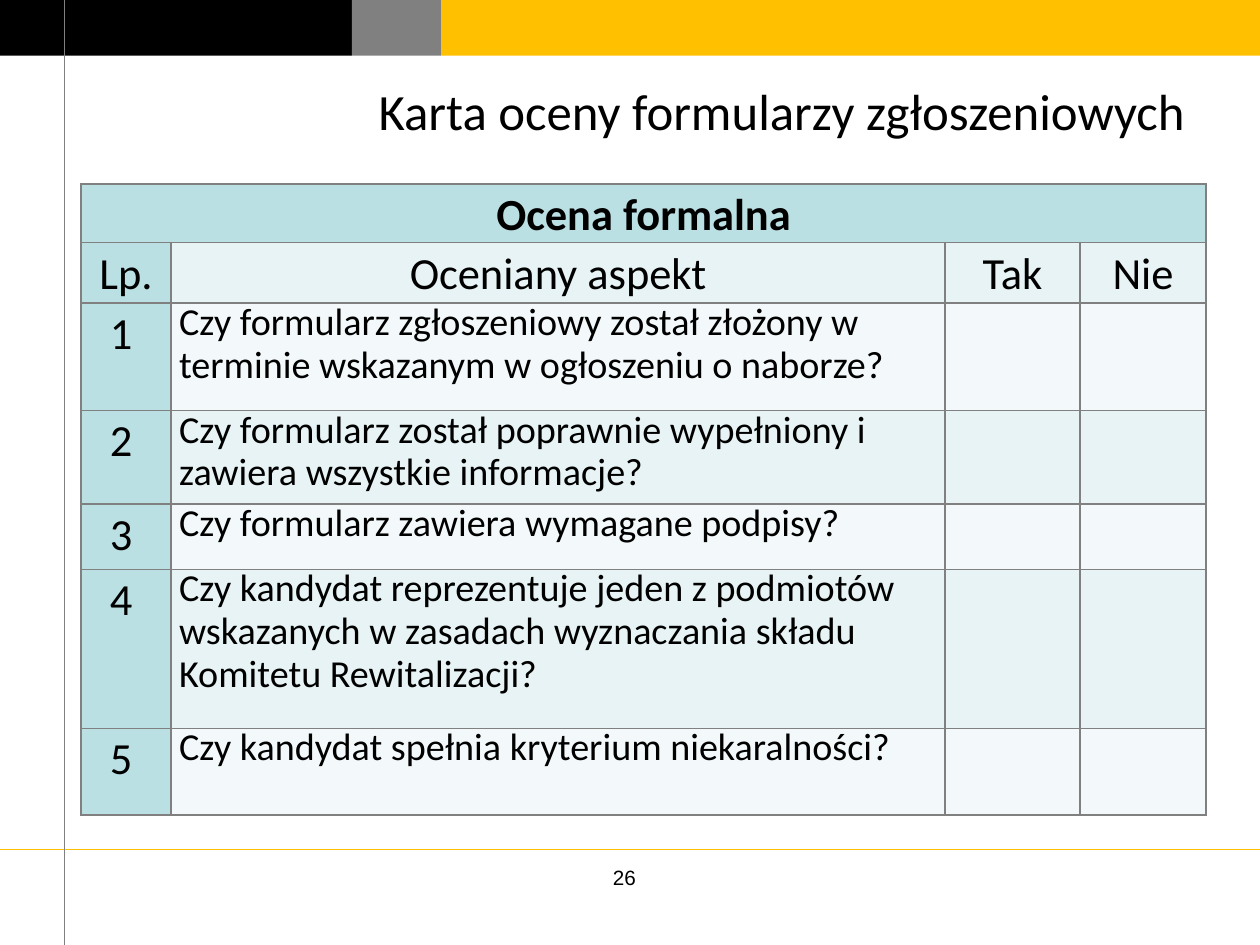
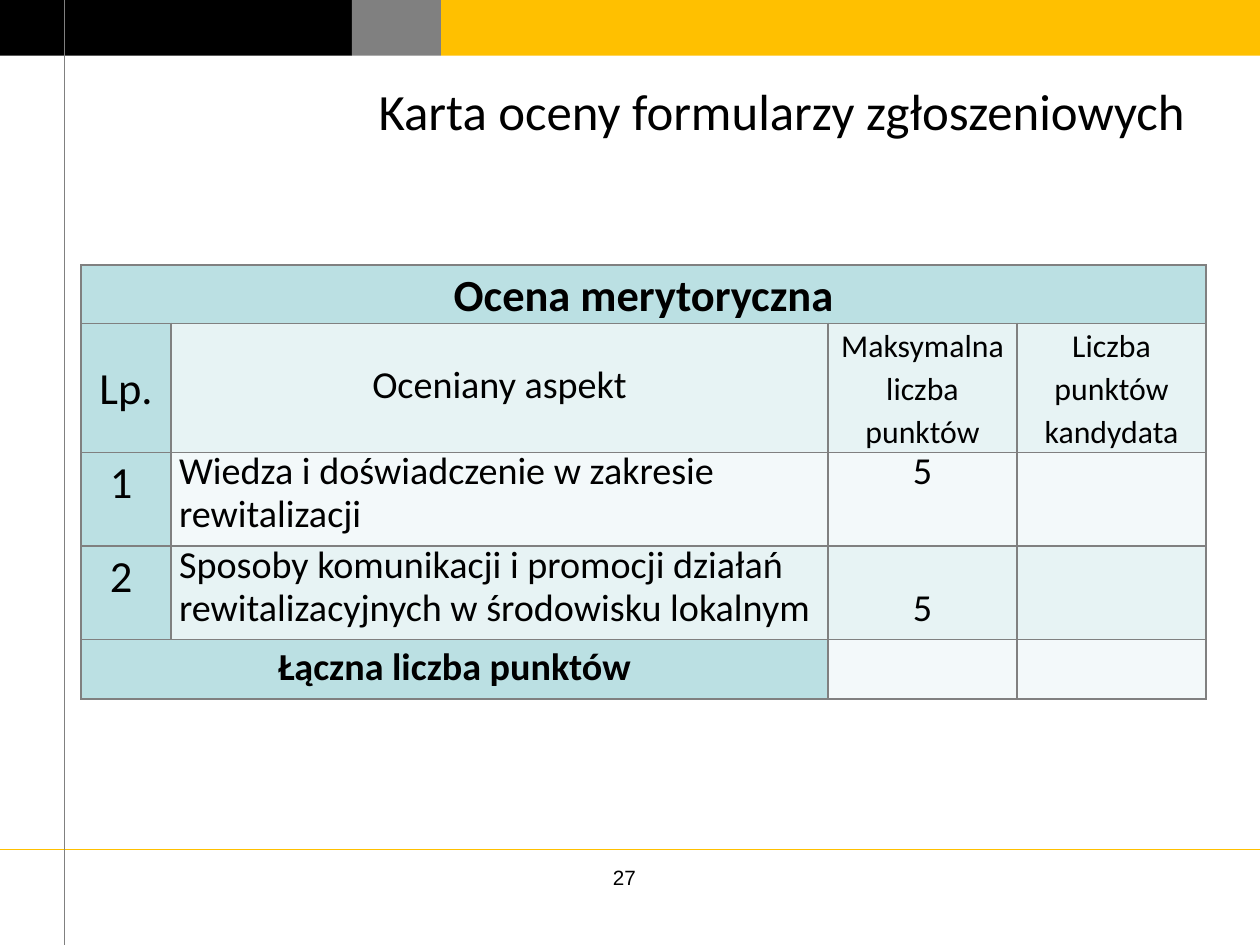
from dataclasses import dataclass

import lxml.etree
import pptx
import pptx.dml.color
import pptx.enum.shapes
import pptx.enum.text
import pptx.oxml.ns
import pptx.util

Cm = pptx.util.Cm
Pt = pptx.util.Pt
Align = pptx.enum.text.PP_ALIGN
Anchor = pptx.enum.text.MSO_ANCHOR


def rgb(value):
    return pptx.dml.color.RGBColor.from_string(value)


@dataclass(frozen=True)
class Theme:
    black: str = "000000"
    grey: str = "808080"
    gold: str = "FFC000"
    teal: str = "BBE0E3"
    teal_light: str = "E7F3F4"
    teal_pale: str = "F3F9FA"
    body_font: str = "Calibri"
    number_font: str = "Arial"
    title_size: int = 32
    large: int = 28
    medium: int = 24
    small: int = 20
    number_size: int = 13
    rule_width: float = 0.75
    border_width: float = 1


@dataclass(frozen=True)
class CellStyle:
    size: int
    spacing: object = Pt(27)
    align: object = Align.CENTER
    anchor: object = Anchor.TOP
    bold: bool = False
    top: object = 0
    right: object = Cm(0.18)


THEME = Theme()
WIDTH, HEIGHT = Cm(28), Cm(21)
LOOSE = 1.07

# Cell styles
HEADING = CellStyle(THEME.large, LOOSE, bold=True)
LABEL = CellStyle(THEME.large, LOOSE, anchor=Anchor.MIDDLE)
ORDINAL = CellStyle(THEME.large, LOOSE, right=Cm(0.4))
ASPECT = CellStyle(THEME.medium, align=Align.LEFT)
ASPECT_LABEL = CellStyle(THEME.medium, anchor=Anchor.MIDDLE)
POINTS_LABEL = CellStyle(THEME.small, anchor=Anchor.MIDDLE)
POINTS = CellStyle(THEME.medium)
POINTS_LOWER = CellStyle(THEME.medium, top=Pt(27))
TOTAL = CellStyle(THEME.medium, anchor=Anchor.MIDDLE, bold=True)


def write(paragraph, text, size, font=THEME.body_font, bold=False):
    run = paragraph.add_run()
    run.text = text
    run.font.name = font
    run.font.size = Pt(size)
    run.font.bold = bold
    run.font.color.rgb = rgb(THEME.black)


def set_insets(frame):
    frame.margin_left = frame.margin_right = Cm(0.28)
    frame.margin_top = frame.margin_bottom = Cm(0.15)
    frame.word_wrap = True
    frame.auto_size = pptx.enum.text.MSO_AUTO_SIZE.NONE


def add_band(slide, left, width, colour):
    band = slide.shapes.add_shape(
        pptx.enum.shapes.MSO_SHAPE.RECTANGLE, left, 0, width, Cm(1.24))
    band.shadow.inherit = False
    band.fill.solid()
    band.fill.fore_color.rgb = rgb(colour)
    band.line.fill.background()
    return band


def add_rule(slide, start, end, colour):
    rule = slide.shapes.add_connector(
        pptx.enum.shapes.MSO_CONNECTOR.STRAIGHT, *start, *end)
    rule.line.color.rgb = rgb(colour)
    rule.line.width = Pt(THEME.rule_width)
    lxml.etree.SubElement(rule.element.spPr, pptx.oxml.ns.qn("a:effectLst"))
    return rule


def build_layout_frame(slide):
    """Draw the bands and rules, then keep them on the slide's layout."""
    grey_left, gold_left = Cm(7.82), Cm(9.8)
    rule_x, rule_y = Cm(1.43), Cm(18.87)
    parts = [
        add_band(slide, 0, grey_left, THEME.black),
        add_band(slide, gold_left, WIDTH - gold_left, THEME.gold),
        add_rule(slide, (0, rule_y), (WIDTH, rule_y), THEME.gold),
        add_rule(slide, (rule_x, HEIGHT), (rule_x, 0), THEME.grey),
        add_band(slide, grey_left, gold_left - grey_left, THEME.grey),
    ]
    layout_tree = slide.slide_layout.shapes.element
    for order, part in enumerate(parts):
        part.element.xpath(".//p:cNvPr")[0].set("id", str(100 + order))
        layout_tree.insert(2 + order, part.element)


def place_title(slide, text, left, top, width, height):
    title = slide.shapes.title
    title.left, title.top, title.width, title.height = left, top, width, height
    set_insets(title.text_frame)
    title.text_frame.vertical_anchor = Anchor.MIDDLE
    line = title.text_frame.paragraphs[0]
    line.alignment = Align.RIGHT
    write(line, text, THEME.title_size)


def place_page_number(slide, number, left, top, width, height):
    footer = slide.shapes.add_textbox(left, top, width, height)
    set_insets(footer.text_frame)
    write(footer.text_frame.paragraphs[0], str(number),
          THEME.number_size, THEME.number_font)


def add_borders(cell):
    qn = pptx.oxml.ns.qn
    properties = cell._tc.get_or_add_tcPr()
    for side in ("lnL", "lnR", "lnT", "lnB"):
        border = lxml.etree.SubElement(
            properties, qn(f"a:{side}"), w=str(Pt(THEME.border_width)))
        fill = lxml.etree.SubElement(border, qn("a:solidFill"))
        lxml.etree.SubElement(fill, qn("a:srgbClr"), val=THEME.grey)


def fill_cell(cell, text, style):
    cell.margin_left, cell.margin_right = Cm(0.18), style.right
    cell.margin_top, cell.margin_bottom = style.top, 0
    cell.vertical_anchor = style.anchor
    line = cell.text_frame.paragraphs[0]
    line.alignment = style.align
    line.line_spacing = style.spacing
    write(line, text, style.size, bold=style.bold)


def place_score_table(slide, left, top, columns, rows, spans):
    """rows: (height, {column: (text, style)}); spans: {row: last column}."""
    heights = [height for height, _ in rows]
    frame = slide.shapes.add_table(
        len(rows), len(columns), left, top, Cm(sum(columns)), Cm(sum(heights)))
    table = frame.table
    table.first_row = table.horz_banding = False
    for column, width in zip(table.columns, columns):
        column.width = Cm(width)
    for r, (height, entries) in enumerate(rows):
        table.rows[r].height = Cm(height)
        last_accent = spans.get(r, 0)
        for c in range(len(columns)):
            cell = table.cell(r, c)
            add_borders(cell)
            stripe = THEME.teal_light if r % 2 else THEME.teal_pale
            cell.fill.solid()
            cell.fill.fore_color.rgb = rgb(
                THEME.teal if c <= last_accent else stripe)
            if c in entries:
                fill_cell(cell, *entries[c])
        if last_accent:
            table.cell(r, 0).merge(table.cell(r, last_accent))


def add_card_slide(deck, number, table_top, columns, rows, spans):
    slide = deck.slides.add_slide(deck.slide_layouts[5])
    place_title(slide, "Karta oceny formularzy zgłoszeniowych",
                Cm(1.43), Cm(1.24), Cm(25.2), Cm(2.44))
    place_page_number(slide, number, Cm(13.34), Cm(19.08), Cm(4), Cm(1.12))
    place_score_table(slide, Cm(1.8), table_top, columns, rows, spans)
    return slide


def add_formal_slide(deck):
    questions = [
        (2.39, "Czy formularz zgłoszeniowy został złożony w terminie "
               "wskazanym w ogłoszeniu o naborze?"),
        (2.08, "Czy formularz został poprawnie wypełniony i zawiera "
               "wszystkie informacje?"),
        (1.45, "Czy formularz zawiera wymagane podpisy?"),
        (3.53, "Czy kandydat reprezentuje jeden z podmiotów wskazanych "
               "w zasadach wyznaczania składu Komitetu Rewitalizacji?"),
        (1.93, "Czy kandydat spełnia kryterium niekaralności?"),
    ]
    labels = ["Lp.", "Oceniany aspekt", "Tak", "Nie"]
    rows = [
        (1.28, {0: ("Ocena formalna", HEADING)}),
        (1.35, {c: (label, LABEL) for c, label in enumerate(labels)}),
    ]
    rows += [(height, {0: (str(n), ORDINAL), 1: (question, ASPECT)})
             for n, (height, question) in enumerate(questions, 1)]
    return add_card_slide(deck, 26, Cm(4.09), [2, 17.2, 3, 2.8], rows, {0: 3})


def add_merit_slide(deck):
    rows = [
        (1.28, {0: ("Ocena merytoryczna", HEADING)}),
        (2.87, {0: ("Lp.", LABEL),
                1: ("Oceniany aspekt", ASPECT_LABEL),
                2: ("Maksymalna liczba punktów", POINTS_LABEL),
                3: ("Liczba punktów kandydata", POINTS_LABEL)}),
        (2.08, {0: ("1", ORDINAL),
                1: ("Wiedza i doświadczenie w zakresie rewitalizacji", ASPECT),
                2: ("5", POINTS)}),
        (2.08, {0: ("2", ORDINAL),
                1: ("Sposoby komunikacji i promocji działań "
                    "rewitalizacyjnych w środowisku lokalnym", ASPECT),
                2: ("5", POINTS_LOWER)}),
        (1.32, {0: ("Łączna liczba punktów", TOTAL)}),
    ]
    return add_card_slide(
        deck, 27, Cm(5.89), [2, 14.6, 4.2, 4.2], rows, {0: 3, 4: 1})


def main():
    deck = pptx.Presentation()
    deck.slide_width, deck.slide_height = WIDTH, HEIGHT
    formal = add_formal_slide(deck)
    build_layout_frame(formal)
    add_merit_slide(deck)
    deck.save("out.pptx")


if __name__ == "__main__":
    main()
